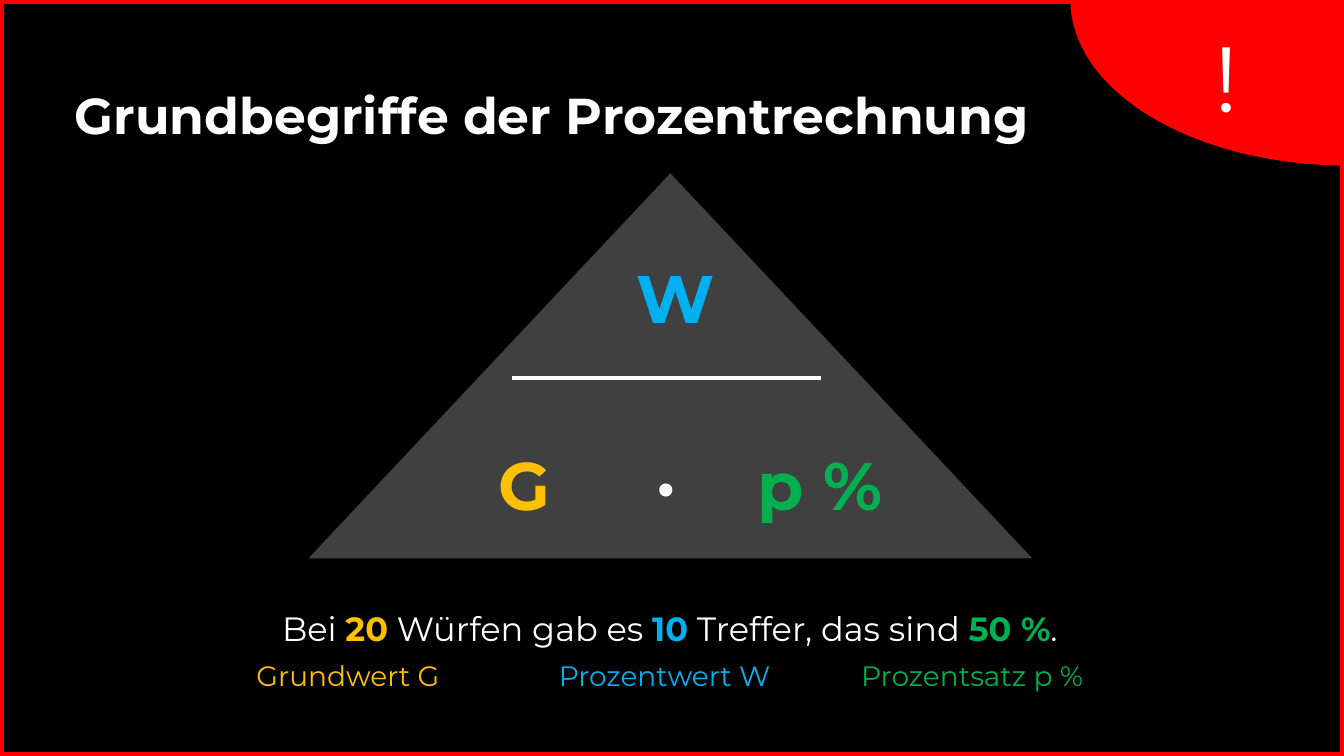
from dataclasses import dataclass

from lxml import etree
from pptx import Presentation
from pptx.dml.color import RGBColor
from pptx.enum.shapes import MSO_CONNECTOR, MSO_SHAPE
from pptx.enum.text import MSO_ANCHOR, PP_ALIGN
from pptx.oxml.ns import qn
from pptx.slide import Slide
from pptx.util import Pt

FONT = "Montserrat"
BLACK = RGBColor(0x00, 0x00, 0x00)
WHITE = RGBColor(0xFF, 0xFF, 0xFF)
RED = RGBColor(0xFF, 0x00, 0x00)
GRAY = RGBColor(0x40, 0x40, 0x40)
YELLOW = RGBColor(0xFF, 0xC0, 0x00)
BLUE = RGBColor(0x00, 0xB0, 0xF0)
GREEN = RGBColor(0x00, 0xB0, 0x50)

RECTANGLE, PIE, TRIANGLE = MSO_SHAPE.RECTANGLE, MSO_SHAPE.PIE, MSO_SHAPE.ISOSCELES_TRIANGLE
STRAIGHT = MSO_CONNECTOR.STRAIGHT
LEFT, CENTER = PP_ALIGN.LEFT, PP_ALIGN.CENTER
TOP, MIDDLE, BOTTOM = MSO_ANCHOR.TOP, MSO_ANCHOR.MIDDLE, MSO_ANCHOR.BOTTOM

SLIDE_WIDTH, SLIDE_HEIGHT = 960, 540
LABEL_STEP = 216


@dataclass(frozen=True)
class Box:
    left: float
    top: float
    width: float
    height: float

    def lengths(self) -> tuple[Pt, Pt, Pt, Pt]:
        return Pt(self.left), Pt(self.top), Pt(self.width), Pt(self.height)


@dataclass(frozen=True)
class Span:
    text: str
    color: RGBColor
    bold: bool = False


@dataclass(frozen=True)
class Line:
    spans: tuple[Span, ...]
    size: float
    align: PP_ALIGN = CENTER
    spacing: float = 1.0
    space_before: float = 0
    tab_stops: tuple[float, ...] = ()


@dataclass(frozen=True)
class TextBlock:
    box: Box
    lines: tuple[Line, ...]
    anchor: MSO_ANCHOR = MIDDLE


def formula_part(text: str, color: RGBColor, box: Box) -> TextBlock:
    return TextBlock(box, (Line((Span(text, color, True),), 48),))


EXCLAMATION = TextBlock(
    Box(798.5, 10.8, 155.5, 87.1), (Line((Span("!", WHITE),), 66),), TOP)
TITLE = TextBlock(
    Box(46.1, 61.2, 733, 51.1),
    (Line((Span("Grundbegriffe der Prozentrechnung", WHITE, True),), 36, LEFT, 0.9),),
    TOP)
EXAMPLE = TextBlock(
    Box(46.1, 160.6, 864.7, 337.7),
    (
        Line((
            Span("Bei ", WHITE),
            Span("20", YELLOW, True),
            Span(" Würfen gab es ", WHITE),
            Span("10", BLUE, True),
            Span(" Treffer, das sind ", WHITE),
            Span("50 %", GREEN, True),
            Span(".", WHITE),
        ), 24, spacing=0.9),
        Line((
            Span("Grundwert G\t", YELLOW),
            Span("Prozentwert W\t", BLUE),
            Span("Prozentsatz p %", GREEN),
        ), 20, spacing=0.9, space_before=10, tab_stops=(LABEL_STEP, 2 * LABEL_STEP)),
    ),
    BOTTOM)
FORMULA = (
    formula_part("W", BLUE, Box(447.8, 179.3, 62.6, 65.5)),
    formula_part("G", YELLOW, Box(343.4, 312.5, 62.6, 65.5)),
    formula_part("p %", GREEN, Box(529.2, 312.5, 113, 65.5)),
    formula_part(".", WHITE, Box(445, 302.4, 62.6, 65.5)),
)


def add_filled_shape(slide: Slide, kind: MSO_SHAPE, box: Box, color: RGBColor,
                     adjustments: tuple[float, ...] = ()) -> None:
    shape = slide.shapes.add_shape(kind, *box.lengths())
    shape.shadow.inherit = False
    shape.fill.solid()
    shape.fill.fore_color.rgb = color
    shape.line.fill.background()
    for index, value in enumerate(adjustments):
        shape.adjustments[index] = value


def add_frame(slide: Slide) -> None:
    frame = slide.shapes.add_shape(
        RECTANGLE, *Box(0, 0, SLIDE_WIDTH, SLIDE_HEIGHT).lengths())
    frame.shadow.inherit = False
    frame.fill.background()
    frame.line.color.rgb = RED
    frame.line.width = Pt(6)


def add_fraction_bar(slide: Slide) -> None:
    bar = slide.shapes.add_connector(STRAIGHT, Pt(365.8), Pt(270), Pt(586.1), Pt(270))
    bar.line.color.rgb = WHITE
    bar.line.width = Pt(3)
    etree.SubElement(bar._element.spPr, qn("a:effectLst"))


def add_text(slide: Slide, block: TextBlock) -> None:
    frame = slide.shapes.add_textbox(*block.box.lengths()).text_frame
    frame.word_wrap = True
    frame.vertical_anchor = block.anchor
    for index, line in enumerate(block.lines):
        paragraph = frame.add_paragraph() if index else frame.paragraphs[0]
        paragraph.alignment = line.align
        paragraph.line_spacing = line.spacing
        paragraph.space_before = Pt(line.space_before)
        if line.tab_stops:
            tabs = etree.SubElement(paragraph._p.get_or_add_pPr(), qn("a:tabLst"))
            for stop in line.tab_stops:
                etree.SubElement(tabs, qn("a:tab"), pos=str(Pt(stop)), algn="l")
        paragraph.font.name = FONT
        paragraph.font.size = Pt(line.size)
        for span in line.spans:
            run = paragraph.add_run()
            run.text = span.text
            run.font.color.rgb = span.color
            run.font.bold = span.bold


def main() -> None:
    presentation = Presentation()
    presentation.slide_width = Pt(SLIDE_WIDTH)
    presentation.slide_height = Pt(SLIDE_HEIGHT)
    slide = presentation.slides.add_slide(presentation.slide_layouts[6])
    slide.background.fill.solid()
    slide.background.fill.fore_color.rgb = BLACK

    add_frame(slide)
    # Angles of the quarter ellipse: 54 stands for 90°, 108 for 180°
    add_filled_shape(slide, PIE, Box(764.5, -118.6, 394.5, 236.8), RED, (54, 108))
    for block in (EXCLAMATION, EXAMPLE, TITLE):
        add_text(slide, block)
    add_filled_shape(slide, TRIANGLE, Box(220.3, 123.8, 517, 275), GRAY)
    add_fraction_bar(slide)
    for part in FORMULA:
        add_text(slide, part)

    presentation.save("out.pptx")


if __name__ == "__main__":
    main()
